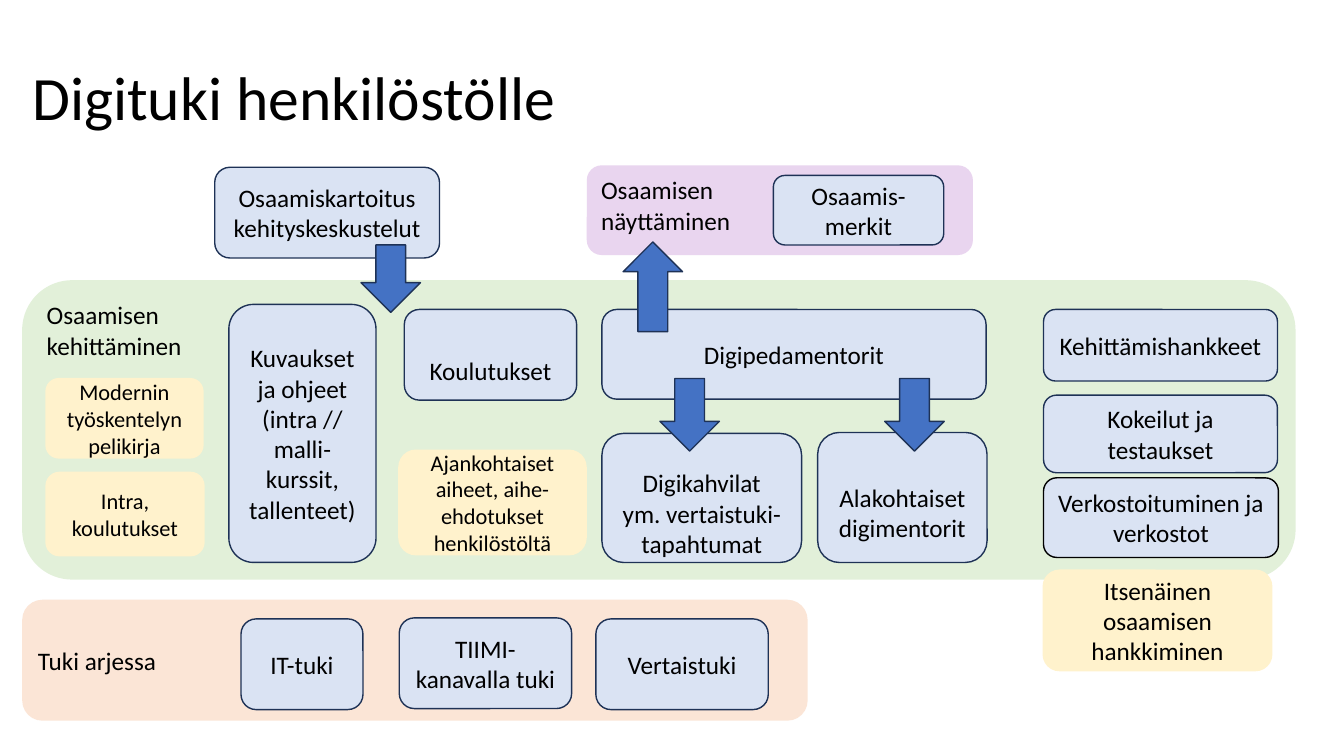
from dataclasses import dataclass

from lxml import etree
from pptx import Presentation
from pptx.dml.color import RGBColor
from pptx.enum.shapes import MSO_SHAPE
from pptx.enum.text import MSO_ANCHOR, MSO_AUTO_SIZE, PP_ALIGN
from pptx.oxml.ns import qn
from pptx.util import Inches, Pt

ROUNDED = MSO_SHAPE.ROUNDED_RECTANGLE
ARROW = MSO_SHAPE.RIGHT_ARROW
TOP, MIDDLE = MSO_ANCHOR.TOP, MSO_ANCHOR.MIDDLE
LEFT, CENTER = PP_ALIGN.LEFT, PP_ALIGN.CENTER


@dataclass(frozen=True)
class Theme:
    font: str = "Calibri"
    black: str = "000000"
    navy: str = "1E3256"
    blue: str = "4472C4"
    pale_blue: str = "DAE3F3"
    yellow: str = "FFF2CC"
    green: str = "E2F0D9"
    purple: str = "CD9EDB"
    peach: str = "FBE5D6"
    title_size: int = 44
    body_size: int = 18
    small_size: int = 16


theme = Theme()


def add_block(kind, place, fill, line=None):
    shape = page.shapes.add_shape(kind, *(Inches(length) for length in place))
    shape.shadow.inherit = False
    shape.fill.solid()
    shape.fill.fore_color.rgb = RGBColor.from_string(fill)
    if line:
        shape.line.color.rgb = RGBColor.from_string(line)
        shape.line.width = Pt(1)
    else:
        shape.line.fill.background()
    return shape


def write_text(shape, text, size=theme.body_size, align=CENTER, anchor=MIDDLE):
    frame = shape.text_frame
    frame.text = text
    frame_format = {"word_wrap": True, "vertical_anchor": anchor,
                    "auto_size": MSO_AUTO_SIZE.NONE}
    for name, value in frame_format.items():
        setattr(frame, name, value)
    for para in frame.paragraphs:
        para.alignment = align
        for span in para.runs:
            for name, value in {"name": theme.font, "size": Pt(size)}.items():
                setattr(span.font, name, value)
            span.font.color.rgb = RGBColor.from_string(theme.black)


deck = Presentation()
deck.slide_width, deck.slide_height = Inches(13.33), Inches(7.5)
page = deck.slides.add_slide(deck.slide_layouts[5])

# Title
title = page.shapes.title
title_place = {"left": 0.22, "top": 0.27, "width": 11.5, "height": 1.45}
for name, value in title_place.items():
    setattr(title, name, Inches(value))
write_text(title, "Digituki henkilöstölle", theme.title_size, LEFT)
title.text_frame.paragraphs[0].line_spacing = 0.9

# Background panels
panels = [
    ("Osaamisen\nnäyttäminen", (5.82, 1.64, 3.83, 0.89), theme.purple, TOP),
    ("Osaamisen\nkehittäminen", (0.22, 2.78, 12.63, 2.97), theme.green, TOP),
    ("Tuki arjessa", (0.22, 5.95, 7.79, 1.2), theme.peach, MIDDLE),
]
for text, place, fill, anchor in panels:
    panel = add_block(ROUNDED, place, fill)
    write_text(panel, text, align=LEFT, anchor=anchor)
    if fill == theme.purple:
        color = panel.fill._xPr.find(qn("a:solidFill"))[0]
        etree.SubElement(color, qn("a:alpha"), val="43000")

# Outlined boxes; the last value lowers the text by one line
boxes = [
    ("Osaamiskartoitus\nkehityskeskustelut", (2.13, 1.66, 2.23, 0.9), False),
    ("Osaamis-merkit", (7.67, 1.74, 1.69, 0.69), False),
    ("Kuvaukset ja ohjeet (intra // malli-kurssit, tallenteet)",
     (2.27, 3.02, 1.46, 2.56), False),
    ("Koulutukset", (4.01, 3.07, 1.71, 0.9), True),
    ("Digipedamentorit", (5.97, 3.07, 3.81, 0.89), False),
    ("Digikahvilat\nym. vertaistuki-tapahtumat", (5.97, 4.3, 1.98, 1.28), True),
    ("Alakohtaiset digimentorit", (8.11, 4.29, 1.68, 1.29), True),
    ("Kehittämishankkeet", (10.35, 3.07, 2.32, 0.71), False),
    ("Kokeilut ja testaukset", (10.35, 3.92, 2.32, 0.77), False),
    ("Verkostoituminen ja verkostot", (10.35, 4.74, 2.33, 0.79), False),
    ("IT-tuki", (2.39, 6.14, 1.21, 0.9), False),
    ("TIIMI-kanavalla tuki", (3.96, 6.13, 1.71, 0.9), False),
    ("Vertaistuki", (5.91, 6.14, 1.71, 0.9), False),
]
for text, place, lowered in boxes:
    line = theme.black if text.startswith("Verkostoituminen") else theme.navy
    box = add_block(ROUNDED, place, theme.pale_blue, line)
    write_text(box, text)
    if lowered:
        box.text_frame.margin_top = Inches(0.35)

# Yellow notes
notes = [
    ("Modernin työskentelyn pelikirja", (0.45, 3.75, 1.57, 0.8), theme.small_size),
    ("Intra, koulutukset", (0.45, 4.68, 1.58, 0.84), theme.small_size),
    ("Ajankohtaiset aiheet, aihe-ehdotukset henkilöstöltä",
     (3.95, 4.46, 1.87, 1.05), theme.small_size),
    ("Itsenäinen osaamisen hankkiminen", (10.34, 5.65, 2.28, 1.01), theme.body_size),
]
for text, place, size in notes:
    write_text(add_block(ROUNDED, place, theme.yellow), text, size)

# Block arrows, turned down (90) or up (270)
arrows = [
    ((3.54, 2.47, 0.67, 0.59), 90),
    ((6.03, 2.55, 0.89, 0.59), 270),
    ((6.48, 3.82, 0.72, 0.59), 90),
    ((8.71, 3.82, 0.72, 0.59), 90),
]
for place, angle in arrows:
    add_block(ARROW, place, theme.blue, theme.navy).rotation = angle

deck.save("out.pptx")
